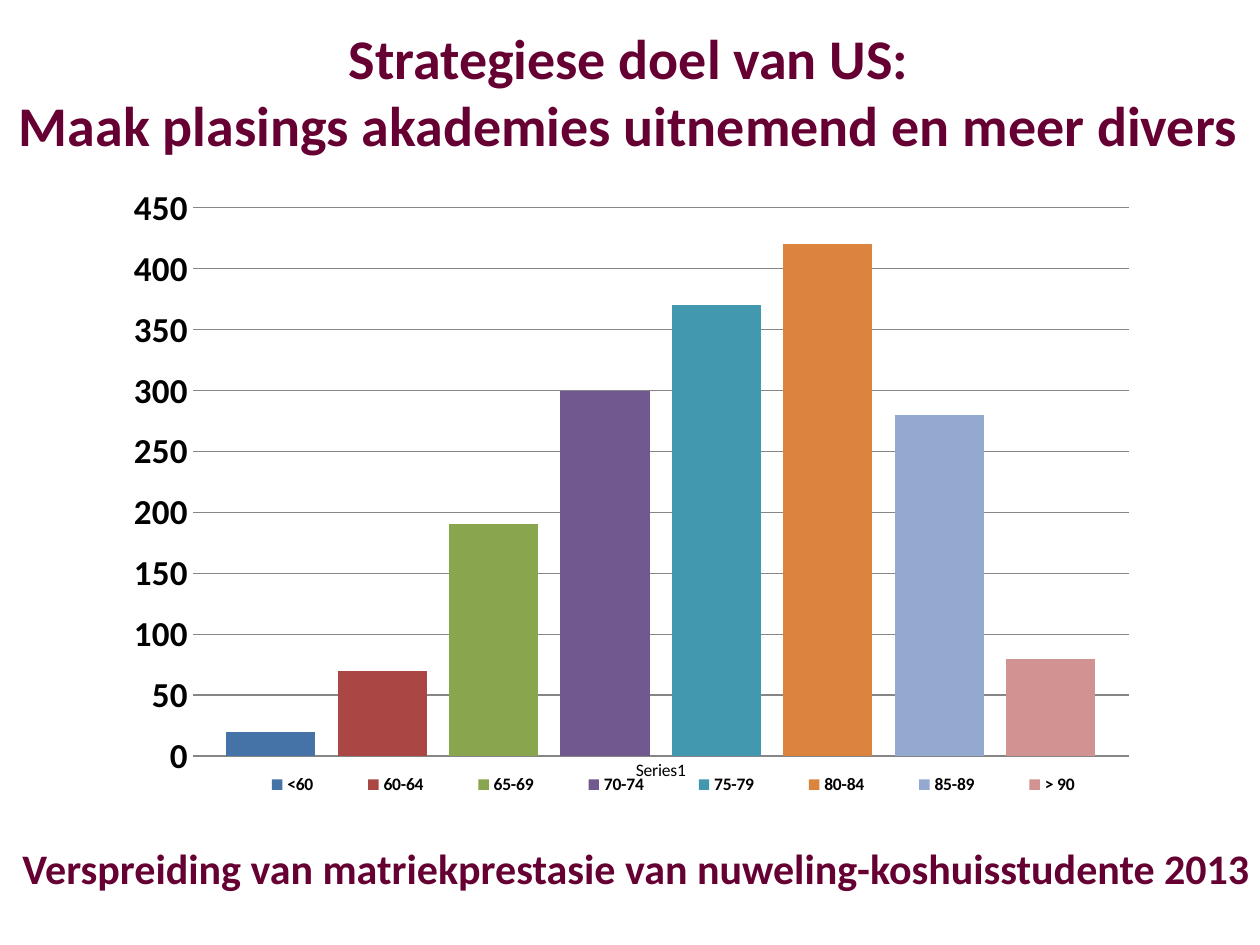
import pptx
import pptx.chart.data
import pptx.dml.color
import pptx.enum.chart
import pptx.enum.text
import pptx.oxml
import pptx.oxml.ns
import pptx.util

Pt = pptx.util.Pt

HEADING = ["Strategiese doel van US:", "Maak plasings akademies uitnemend en meer divers"]
CAPTION = ["Verspreiding van matriekprestasie van nuweling-koshuisstudente 2013"]
FONT, MAROON, BLACK, GREY = "Calibri", "660033", "000000", "868686"
MARK_BANDS = [
    ("<60", 20, "4572A7"),
    ("60-64", 70, "AA4643"),
    ("65-69", 190, "89A54E"),
    ("70-74", 300, "71588F"),
    ("75-79", 370, "4198AF"),
    ("80-84", 420, "DB843D"),
    ("85-89", 280, "93A9CF"),
    ("> 90", 80, "D19392"),
]


def rgb(value):
    return pptx.dml.color.RGBColor.from_string(value)


def style_font(font, size, bold, color):
    font.name, font.size, font.bold = FONT, Pt(size), bold
    font.color.rgb = rgb(color)


def write_lines(shape, lines, size):
    frame = shape.text_frame
    frame.word_wrap = True
    frame.auto_size = pptx.enum.text.MSO_AUTO_SIZE.NONE
    frame.vertical_anchor = pptx.enum.text.MSO_ANCHOR.MIDDLE
    frame.text = "\n".join(lines)
    for paragraph in frame.paragraphs:
        paragraph.alignment = pptx.enum.text.PP_ALIGN.CENTER
        style_font(paragraph.font, size, True, MAROON)


def set_layout(element, x, y, width, height, inner=False):
    """Place a plot area or legend by fractions of the chart."""
    for old in element.findall(pptx.oxml.ns.qn("c:layout")):
        element.remove(old)
    target = '<c:layoutTarget val="inner"/>' if inner else ""
    layout = pptx.oxml.parse_xml(
        f'<c:layout {pptx.oxml.ns.nsdecls("c")}><c:manualLayout>{target}'
        '<c:xMode val="edge"/><c:yMode val="edge"/>'
        f'<c:x val="{x}"/><c:y val="{y}"/><c:w val="{width}"/><c:h val="{height}"/>'
        '</c:manualLayout></c:layout>')
    position = element.find(pptx.oxml.ns.qn("c:legendPos"))
    if position is None:
        element.insert(0, layout)
    else:
        position.addnext(layout)


def add_band_chart(slide):
    data = pptx.chart.data.CategoryChartData()
    data.categories = ["Series1"]
    for name, value, _ in MARK_BANDS:
        data.add_series(name, [value])
    chart = slide.shapes.add_chart(
        pptx.enum.chart.XL_CHART_TYPE.COLUMN_CLUSTERED,
        Pt(73), Pt(105.4), Pt(572.4), Pt(362.2), data).chart
    chart.has_title = False
    style_font(chart.font, 10, False, BLACK)

    plot = chart.plots[0]
    plot.gap_width, plot.overlap, plot.vary_by_categories = 75, -25, False
    for series, (_, _, color) in zip(plot.series, MARK_BANDS):
        series.format.fill.solid()
        series.format.fill.fore_color.rgb = rgb(color)

    values, categories = chart.value_axis, chart.category_axis
    values.minimum_scale, values.maximum_scale, values.major_unit = 0, 450, 50
    values.format.line.fill.background()
    style_font(values.tick_labels.font, 20, True, BLACK)
    for axis in (values, categories):
        axis.major_tick_mark = pptx.enum.chart.XL_TICK_MARK.NONE
    for line in (values.major_gridlines.format.line, categories.format.line):
        line.color.rgb = rgb(GREY)
        line.width = Pt(0.75)

    chart.has_legend = True
    legend = chart.legend
    legend.position = pptx.enum.chart.XL_LEGEND_POSITION.BOTTOM
    legend.include_in_layout = False
    style_font(legend.font, 10, True, BLACK)
    plot_area = chart.element.find(".//" + pptx.oxml.ns.qn("c:plotArea"))
    legend_area = chart.element.find(".//" + pptx.oxml.ns.qn("c:legend"))
    set_layout(plot_area, 0.065, 0.037, 0.935, 0.865, inner=True)
    set_layout(legend_area, 0.095, 0.922, 0.9, 0.05)


def main():
    presentation = pptx.Presentation()
    presentation.slide_width, presentation.slide_height = Pt(720), Pt(540)
    slide = presentation.slides.add_slide(presentation.slide_layouts[5])

    caption = slide.shapes.title
    caption.left, caption.top = Pt(-0.7), Pt(474)
    caption.width, caption.height = Pt(728.6), Pt(43.2)
    write_lines(caption, CAPTION, 24)

    add_band_chart(slide)

    heading = slide.shapes.add_textbox(Pt(-0.7), Pt(0), Pt(720), Pt(103.7))
    write_lines(heading, HEADING, 32)
    presentation.save("out.pptx")


if __name__ == "__main__":
    main()
